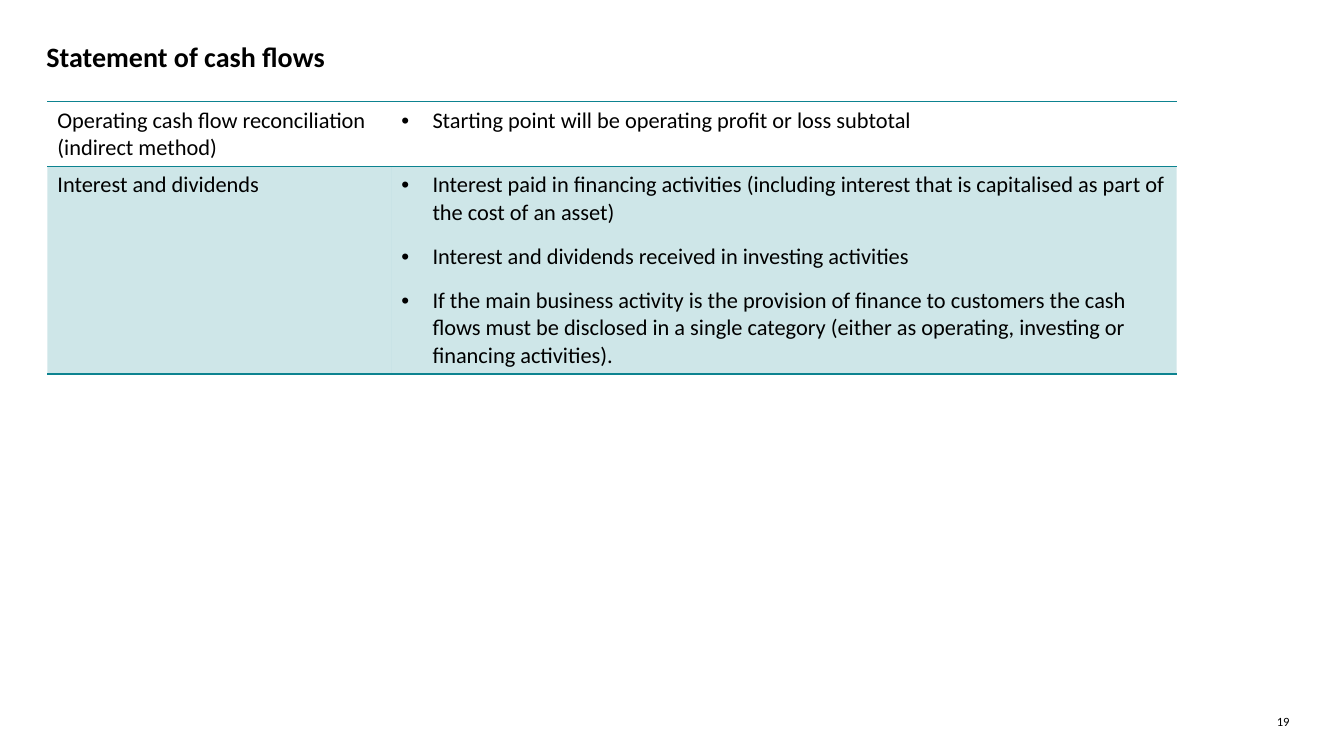
import pptx
import pptx.dml.color
import pptx.enum.text
import pptx.oxml
import pptx.oxml.ns
import pptx.util
from lxml import etree
from pptx.util import Inches

COLOURS = {"text": "000000", "teal": "0D8390"}
FONT = "Calibri"
PLAIN_TABLE_STYLE = "{2D5ABB26-0587-4C30-8999-92F81FD0307C}"
COLUMN_WIDTHS = [3.41, 7.79]

# Each row: topic, bullet points, height, whether it is tinted
CASH_FLOW_ROWS = [
    ("Operating cash flow reconciliation (indirect method)",
     ["Starting point will be operating profit or loss subtotal"],
     0.64, False),
    ("Interest and dividends",
     ["Interest paid in financing activities (including interest that is "
      "capitalised as part of the cost of an asset)",
      "Interest and dividends received in investing activities",
      "If the main business activity is the provision of finance to customers "
      "the cash flows must be disclosed in a single category (either as "
      "operating, investing or financing activities)."],
     2.06, True),
]


def tag(name):
    return pptx.oxml.ns.qn(name)


def colour(name):
    return pptx.dml.color.RGBColor.from_string(COLOURS[name])


def write(frame, texts, size=16, bold=False, align="LEFT", bullet=False):
    """Fill a text frame with one paragraph per text."""
    frame.word_wrap = True
    for index, text in enumerate(texts):
        para = frame.add_paragraph() if index else frame.paragraphs[0]
        para.alignment = getattr(pptx.enum.text.PP_ALIGN, align)
        if index:
            para.space_before = pptx.util.Pt(12)
        if bullet:
            properties = para._p.get_or_add_pPr()
            properties.set("marL", str(Inches(0.31)))
            properties.set("indent", str(-Inches(0.31)))
            face = etree.SubElement(properties, tag("a:buFont"))
            face.set("typeface", "Arial")
            etree.SubElement(properties, tag("a:buChar")).set("char", "•")
        span = para.add_run()
        span.text = text
        span.font.name = FONT
        span.font.size = pptx.util.Pt(size)
        span.font.bold = bold
        span.font.color.rgb = colour("text")


def add_label(page, area, text, **style):
    box = page.shapes.add_textbox(*map(Inches, area))
    frame = box.text_frame
    frame.margin_left = frame.margin_right = 0
    frame.margin_top = frame.margin_bottom = 0
    write(frame, [text], **style)


def add_rule(cell, side):
    """Draw a teal line along one side (lnT or lnB) of a cell."""
    line = etree.SubElement(cell._tc.get_or_add_tcPr(), tag("a:" + side))
    line.set("w", str(pptx.util.Pt(1)))
    fill = etree.SubElement(line, tag("a:solidFill"))
    etree.SubElement(fill, tag("a:srgbClr")).set("val", COLOURS["teal"])


def tint(cell):
    cell.fill.solid()
    cell.fill.fore_color.rgb = colour("teal")
    shade = cell._tc.tcPr.find(tag("a:solidFill")).find(tag("a:srgbClr"))
    etree.SubElement(shade, tag("a:alpha")).set("val", "20000")


def add_cash_flow_table(page, left, top):
    height = sum(row[2] for row in CASH_FLOW_ROWS)
    area = (left, top, sum(COLUMN_WIDTHS), height)
    table = page.shapes.add_table(
        len(CASH_FLOW_ROWS), len(COLUMN_WIDTHS), *map(Inches, area)).table
    table.first_row = table.horz_banding = False
    table._tbl.tblPr.find(tag("a:tableStyleId")).text = PLAIN_TABLE_STYLE
    for column, width in zip(table.columns, COLUMN_WIDTHS):
        column.width = Inches(width)

    for index, (topic, points, height, tinted) in enumerate(CASH_FLOW_ROWS):
        row = table.rows[index]
        row.height = Inches(height)
        write(row.cells[0].text_frame, [topic])
        write(row.cells[1].text_frame, points, bullet=True)
        for cell in row.cells:
            if index == 0:
                add_rule(cell, "lnT")
            add_rule(cell, "lnB")
            if tinted:
                tint(cell)
            else:
                cell.fill.background()


def build_statement_page(deck):
    page = deck.slides.add_slide(deck.slide_layouts[6])
    # Page number
    add_label(page, (12.45, 7.08, 0.34, 0.15), "19", size=9, align="RIGHT")
    # Title
    add_label(page, (0.46, 0.39, 12.21, 0.76), "Statement of cash flows",
              size=20, bold=True)
    # Table of changes
    add_cash_flow_table(page, 0.47, 1.01)


def main():
    deck = pptx.Presentation()
    deck.slide_width, deck.slide_height = Inches(13.33), Inches(7.5)
    build_statement_page(deck)
    deck.save("out.pptx")


if __name__ == "__main__":
    main()
